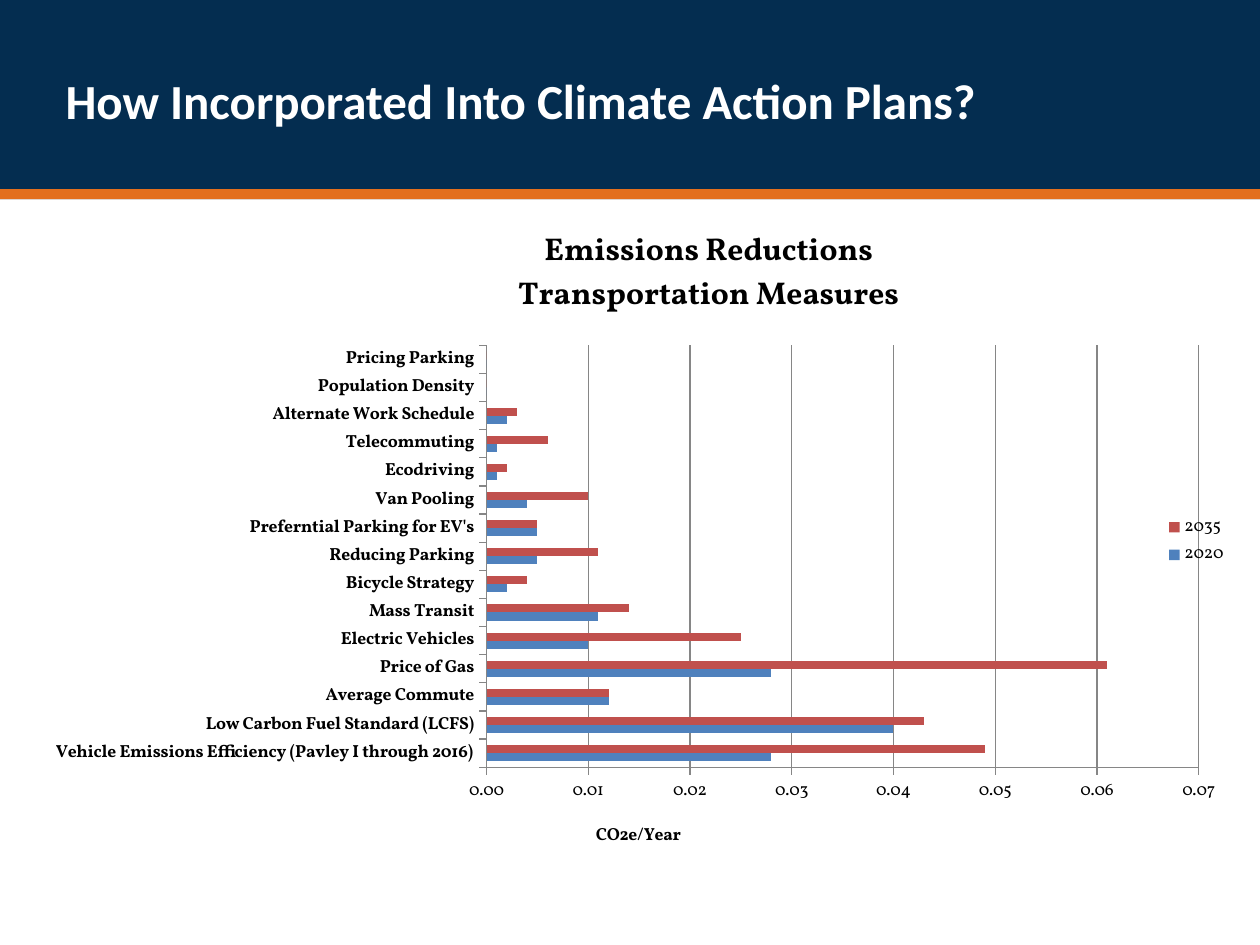
from lxml import etree
from pptx import Presentation
from pptx.chart.data import CategoryChartData
from pptx.dml.color import RGBColor
from pptx.enum.chart import XL_CHART_TYPE, XL_LEGEND_POSITION, XL_TICK_MARK
from pptx.enum.shapes import MSO_SHAPE
from pptx.enum.text import MSO_ANCHOR, PP_ALIGN
from pptx.oxml import parse_xml
from pptx.util import Inches, Pt

BAR = XL_CHART_TYPE.BAR_CLUSTERED
RIGHT = XL_LEGEND_POSITION.RIGHT
OUTSIDE = XL_TICK_MARK.OUTSIDE
RECTANGLE = MSO_SHAPE.RECTANGLE
MIDDLE = MSO_ANCHOR.MIDDLE
LEFT = PP_ALIGN.LEFT

WIDTH, HEIGHT = Inches(10), Inches(7.5)
NAVY, ORANGE, WHITE, BLACK, GREY = "042D50", "E36F1E", "FFFFFF", "000000", "868686"
HEAD_FONT, CHART_FONT = "Calibri", "Vollkorn"
CHART_NS = "http://schemas.openxmlformats.org/drawingml/2006/chart"

MEASURES = [
    ("Vehicle Emissions Efficiency (Pavley I through 2016)", 0.028, 0.049),
    ("Low Carbon Fuel Standard (LCFS)", 0.04, 0.043),
    ("Average Commute", 0.012, 0.012),
    ("Price of Gas", 0.028, 0.061),
    ("Electric Vehicles", 0.01, 0.025),
    ("Mass Transit", 0.011, 0.014),
    ("Bicycle Strategy", 0.002, 0.004),
    ("Reducing Parking", 0.005, 0.011),
    ("Preferntial Parking for EV's", 0.005, 0.005),
    ("Van Pooling", 0.004, 0.01),
    ("Ecodriving", 0.001, 0.002),
    ("Telecommuting", 0.001, 0.006),
    ("Alternate Work Schedule", 0.002, 0.003),
    ("Population Density", 0, 0),
    ("Pricing Parking", 0, 0),
]
SERIES_COLOURS = {"2020": "4F81BD", "2035": "C0504D"}


def colour(value):
    """Turn a hex string into a colour."""
    return RGBColor.from_string(value)


def style_font(font, name=CHART_FONT, size=10, tint=BLACK, bold=False):
    """Format one font."""
    font.name, font.size, font.bold = name, Pt(size), bold
    font.color.rgb = colour(tint)


def write(frame, text, align=None, **style):
    """Fill a text frame with one paragraph per line of text."""
    for index, line in enumerate(text.split("\n")):
        para = frame.add_paragraph() if index else frame.paragraphs[0]
        para.alignment = align
        span = para.add_run()
        span.text = line
        style_font(span.font, **style)


def add_band(page, box, fill):
    """Draw a plain filled band."""
    band = page.shapes.add_shape(RECTANGLE, *box)
    band.shadow.inherit = False
    band.fill.solid()
    band.fill.fore_color.rgb = colour(fill)
    band.line.fill.background()


def add_header(page, box, text):
    """Place the navy header, its orange rule and the slide title."""
    left, top, width, height = box
    rule = int(height * 0.05)
    add_band(page, box, NAVY)
    add_band(page, (left, top + height - rule, width, rule), ORANGE)
    title = page.shapes.title
    title.left, title.top = left + Inches(0.42), top + Inches(0.17)
    title.width, title.height = Inches(9.25), Inches(1.25)
    title.text_frame.vertical_anchor = MIDDLE
    write(title.text_frame, text, LEFT, name=HEAD_FONT, size=28, tint=WHITE, bold=True)
    tree = title.element.getparent()
    tree.append(title.element)


def set_layout(part, after, **shares):
    """Position a chart part by shares of the chart area."""
    for old in part.findall(f"{{{CHART_NS}}}layout"):
        part.remove(old)
    layout = parse_xml(f'<c:layout xmlns:c="{CHART_NS}"/>')
    manual = etree.SubElement(layout, f"{{{CHART_NS}}}manualLayout")
    settings = {"xMode": "edge", "yMode": "edge", **shares}
    if after is None:
        settings = {"layoutTarget": "inner", **settings}
    for name, value in settings.items():
        etree.SubElement(manual, f"{{{CHART_NS}}}{name}").set("val", str(value))
    if after is None:
        part.insert(0, layout)
    else:
        part.find(f"{{{CHART_NS}}}{after}").addnext(layout)


def style_axis(axis, bold=False):
    """Give an axis its ticks, line and label font."""
    axis.major_tick_mark = OUTSIDE
    axis.format.line.color.rgb = colour(GREY)
    style_font(axis.tick_labels.font, bold=bold)


def add_emissions_chart(page, box):
    """Place the clustered bars of emission reductions by measure."""
    names, *columns = zip(*MEASURES)
    data = CategoryChartData()
    data.categories = names
    for year, values in zip(SERIES_COLOURS, columns):
        data.add_series(year, values)
    chart = page.shapes.add_chart(BAR, *box, data).chart
    style_font(chart.font)
    write(chart.chart_title.text_frame, "Emissions Reductions\nTransportation Measures",
          size=18, bold=True)

    plot = chart.plots[0]
    plot.gap_width, plot.overlap, plot.vary_by_categories = 150, 0, False
    for series in plot.series:
        series.format.fill.solid()
        series.format.fill.fore_color.rgb = colour(SERIES_COLOURS[series.name])

    style_axis(chart.category_axis, bold=True)
    scale = chart.value_axis
    style_axis(scale)
    scale.minimum_scale, scale.maximum_scale, scale.major_unit = 0, 0.07, 0.01
    scale.tick_labels.number_format = "0.00"
    scale.tick_labels.number_format_is_linked = False
    scale.has_major_gridlines = True
    scale.major_gridlines.format.line.color.rgb = colour(GREY)
    write(scale.axis_title.text_frame, "CO2e/Year", bold=True)

    chart.has_legend = True
    chart.legend.position = RIGHT
    chart.legend.include_in_layout = True
    style_font(chart.legend.font)

    parts = chart.element
    set_layout(parts.xpath("c:chart/c:plotArea")[0], None, x=0.377, y=0.204, w=0.59, h=0.638)
    set_layout(parts.xpath("c:chart/c:title")[0], "tx", x=0.4, y=0.02)
    set_layout(parts.xpath("c:chart/c:plotArea/c:valAx/c:title")[0], "tx", x=0.465, y=0.92)
    set_layout(parts.xpath("c:chart/c:legend")[0], "legendPos", x=0.94, y=0.455, w=0.05, h=0.09)


def main():
    """Build and save the slide."""
    deck = Presentation()
    deck.slide_width, deck.slide_height = WIDTH, HEIGHT
    page = deck.slides.add_slide(deck.slide_layouts[5])
    add_header(page, (0, 0, WIDTH, Inches(1.58)), "How Incorporated Into Climate Action Plans?")
    add_emissions_chart(page, (Inches(0.25), Inches(1.67), Inches(9.58), Inches(5.25)))
    deck.save("out.pptx")


if __name__ == "__main__":
    main()
